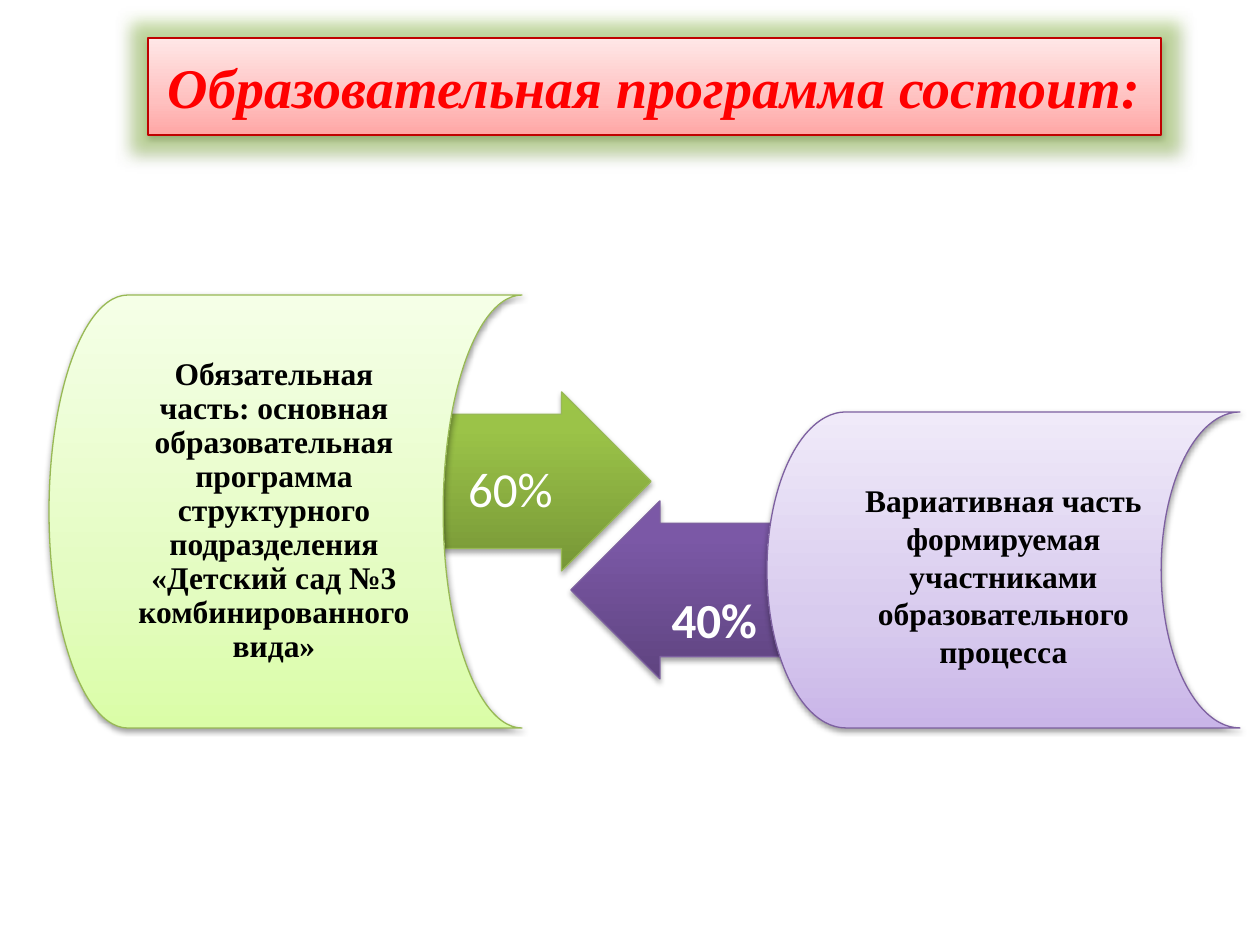
from lxml.etree import SubElement
from pptx import Presentation
from pptx.dml.color import RGBColor
from pptx.enum.shapes import MSO_SHAPE
from pptx.enum.text import MSO_ANCHOR, MSO_AUTO_SIZE, PP_ALIGN
from pptx.oxml.ns import qn
from pptx.util import Emu, Pt

SCALE = 914400 // 126
SERIF = "Times New Roman"
GREEN_LIGHT = [(0, "DAFDA7"), (35, "E4FCC2"), (100, "F5FFE7")]
PURPLE_LIGHT = [(0, "C9B5E8"), (35, "D8CBEE"), (100, "F0EAF9")]
RED_LIGHT = [(0, "FFA6A5"), (35, "FFC0BF"), (100, "FFE7E7")]
GREEN_DARK = [(0, "779737"), (80, "9BC348"), (100, "9DC746")]
PURPLE_DARK = [(0, "5F4480"), (80, "7B58A6"), (100, "7C57A8")]


def px(n):
    return Emu(n * SCALE)


def rgb(value):
    return RGBColor.from_string(value)


def add_node(parent, tag, **attrs):
    return SubElement(parent, qn(tag), {k: str(v) for k, v in attrs.items()})


def add_color(parent, color, alpha=100):
    node = add_node(parent, "a:srgbClr", val=color)
    if alpha < 100:
        add_node(node, "a:alpha", val=alpha * 1000)


def style(sp, stops, line, alpha=38, dist=20000, glow=None):
    sp.line.color.rgb = rgb(line)
    sp.line.width = Pt(0.75)
    sp.fill.gradient()
    sp.fill.gradient_angle = 90
    gs_list = sp.fill._fill._gradFill.find(qn("a:gsLst"))
    for old in list(gs_list):
        gs_list.remove(old)
    for pos, color in stops:
        add_color(add_node(gs_list, "a:gs", pos=pos * 1000), color)
    effects = sp._element.spPr.find(qn("a:effectLst"))
    if effects is None:
        effects = add_node(sp._element.spPr, "a:effectLst")
    if glow:
        add_color(add_node(effects, "a:glow", rad=228600), glow, 40)
    shadow = add_node(effects, "a:outerShdw", blurRad=40000, dist=dist,
                      dir=5400000, rotWithShape=0)
    add_color(shadow, "000000", alpha)


def add_run(p, text, size, color, font, bold=False, italic=False):
    r = p.add_run()
    r.text = text
    r.font.size = Pt(size)
    r.font.name = font
    r.font.bold = bold
    r.font.italic = italic
    r.font.color.rgb = rgb(color)
    return r


def add_shape(s, kind, box):
    sp = s.shapes.add_shape(kind, *map(px, box))
    sp.shadow.inherit = False
    sp.text_frame.word_wrap = True
    return sp


def add_title(s, box):
    sp = s.shapes.title
    sp.left, sp.top, sp.width, sp.height = map(px, box)
    style(sp, RED_LIGHT, "C00000", glow="92C83E")
    tf = sp.text_frame
    tf.auto_size = MSO_AUTO_SIZE.NONE
    tf.vertical_anchor = MSO_ANCHOR.MIDDLE
    p = tf.paragraphs[0]
    p.alignment = PP_ALIGN.CENTER
    r = add_run(p, "Образовательная программа состоит:", 32, "FF0000", SERIF, True, True)
    ln = add_node(r.font._element, "a:ln", w=9525)
    add_color(add_node(ln, "a:solidFill"), "C00000")
    r.font._element.insert(0, ln)


def add_arrow(s, kind, box, stops, line, text, margins, bold=False):
    sp = add_shape(s, kind, box)
    sp.adjustments[0] = 0.75
    sp.adjustments[1] = 0.5
    style(sp, stops, line, alpha=35, dist=23000)
    tf = sp.text_frame
    tf.vertical_anchor = MSO_ANCHOR.TOP
    tf.margin_left, tf.margin_top = map(px, margins)
    tf.margin_right = tf.margin_bottom = 0
    p = tf.paragraphs[0]
    p.alignment = PP_ALIGN.LEFT
    add_run(p, text, 28, "FFFFFF", "Calibri", bold)


def add_part(s, box, stops, line, lines, anchor, margins, spacing):
    sp = add_shape(s, MSO_SHAPE.FLOWCHART_STORED_DATA, box)
    style(sp, stops, line)
    tf = sp.text_frame
    tf.vertical_anchor = anchor
    tf.margin_left, tf.margin_top, tf.margin_right, tf.margin_bottom = map(px, margins)
    for i, text in enumerate(lines):
        p = tf.add_paragraph() if i else tf.paragraphs[0]
        p.alignment = PP_ALIGN.CENTER
        p.line_spacing = spacing
        add_run(p, text, 18, "000000", SERIF, True)


def main():
    prs = Presentation()
    prs.slide_width, prs.slide_height = px(1260), px(945)
    s = prs.slides.add_slide(prs.slide_layouts[5])
    add_title(s, (148, 38, 1013, 97))
    add_arrow(s, MSO_SHAPE.RIGHT_ARROW, (433, 392, 218, 179), GREEN_DARK,
              "98B955", "60%", (35, 44))
    add_arrow(s, MSO_SHAPE.LEFT_ARROW, (571, 501, 217, 178), PURPLE_DARK,
              "7D60A0", "40%", (34, 66), True)
    add_part(s, (49, 295, 473, 433), GREEN_LIGHT, "98B955",
             ["Обязательная часть: основная образовательная программа структурного "
              "подразделения «Детский сад №3 комбинированного вида»"],
             MSO_ANCHOR.MIDDLE, (5, 4, 28, 4), 0.9)
    add_part(s, (767, 412, 473, 316), PURPLE_LIGHT, "7D60A0",
             ["Вариативная часть", "формируемая", "участниками",
              "образовательного процесса"],
             MSO_ANCHOR.TOP, (13, 69, 13, 6), 1.0)
    prs.save("out.pptx")


if __name__ == "__main__":
    main()
